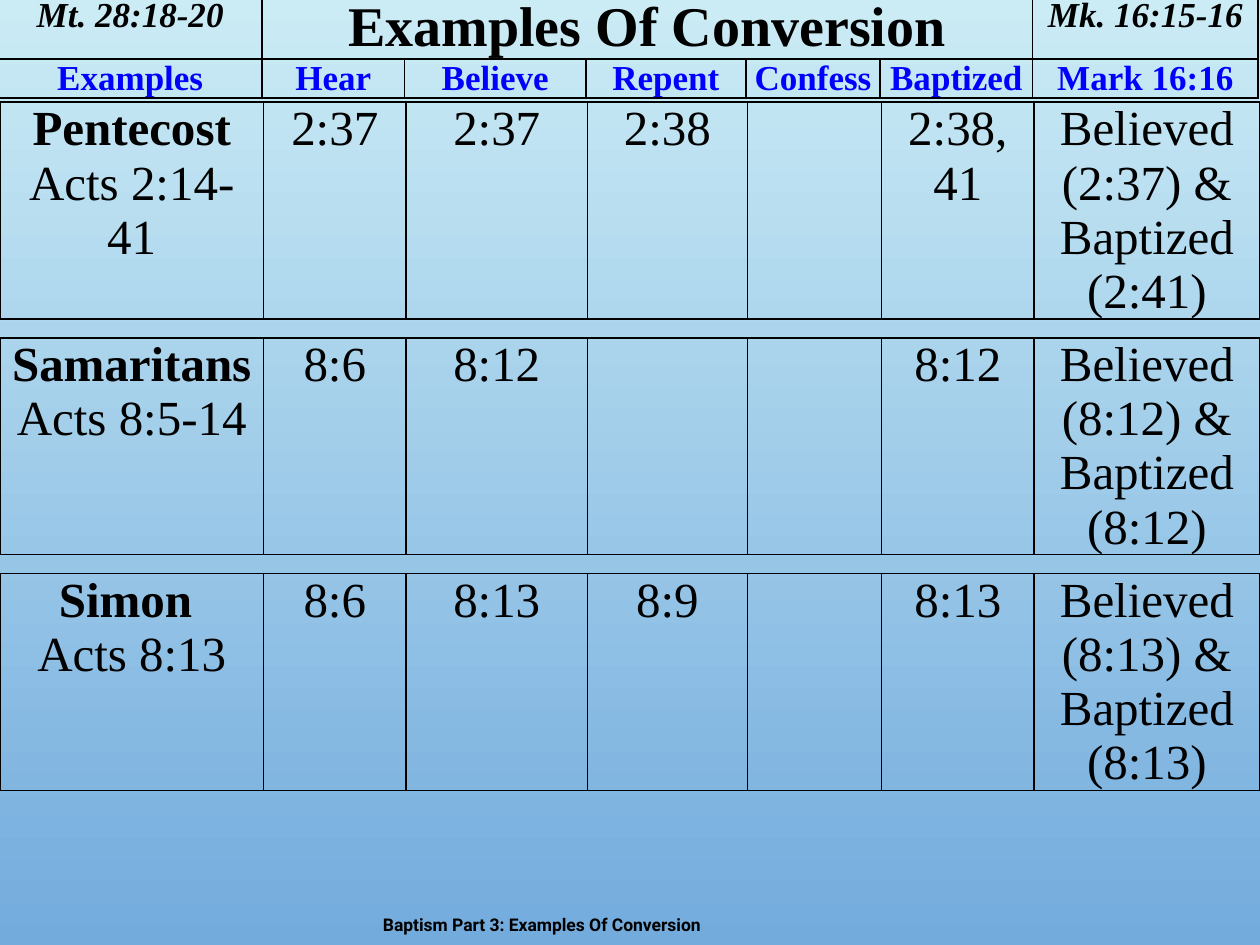
from dataclasses import dataclass

from lxml import etree
from pptx import Presentation
from pptx.dml.color import RGBColor
from pptx.enum import text
from pptx.oxml import ns
from pptx.util import Cm, Pt

COLORS = {"sky": "CBECF5", "deep": "73ABDD", "ink": "000000", "heading": "0000FF"}
SERIF, SANS = "Times New Roman", "Roboto"
COLUMNS = (5.31, 2.88, 3.65, 3.23, 2.7, 3.08, 4.54)
HEADINGS = ("Examples", "Hear", "Believe", "Repent", "Confess", "Baptized", "Mark 16:16")
FIRST_TOP, STEP, EXAMPLE_HEIGHT = 2.06, 4.75, 4.37


@dataclass
class Style:
    size: float
    color: str = "ink"
    bold: bool = False
    italic: bool = False
    font: str = SERIF


@dataclass
class Example:
    name: str
    passage: str
    verses: tuple[str, ...]
    summary: str


REFERENCE = Style(20, bold=True, italic=True)
TITLE = Style(32, bold=True)
HEADING = Style(20, "heading", bold=True)
NAME = Style(28, bold=True)
BODY = Style(28)
FOOTER = Style(10, bold=True, font=SANS)

EXAMPLES = (
    Example("Pentecost", "Acts 2:14-41", ("2:37", "2:37", "2:38", "", "2:38, 41"),
            "Believed (2:37) & Baptized (2:41)"),
    Example("Samaritans", "Acts 8:5-14", ("8:6", "8:12", "", "", "8:12"),
            "Believed (8:12) & Baptized (8:12)"),
    Example("Simon ", "Acts 8:13", ("8:6", "8:13", "8:9", "", "8:13"),
            "Believed (8:13) & Baptized (8:13)"),
)


def format_runs(p, style: Style) -> None:
    for r in p.runs:
        font = r.font
        font.name, font.size = style.font, Pt(style.size)
        font.bold, font.italic = style.bold, style.italic
        font.color.rgb = RGBColor.from_string(COLORS[style.color])


def add_borders(cell) -> None:
    tc_pr = cell._tc.get_or_add_tcPr()
    for side in ("lnL", "lnR", "lnT", "lnB"):
        line = etree.SubElement(tc_pr, ns.qn(f"a:{side}"), w=str(Pt(1)))
        fill = etree.SubElement(line, ns.qn("a:solidFill"))
        etree.SubElement(fill, ns.qn("a:srgbClr"), val=COLORS["ink"])


def add_grid(slide, left: float, top: float, heights: tuple[float, ...]):
    """Add an unfilled, bordered table with the shared column widths."""
    table = slide.shapes.add_table(
        len(heights), len(COLUMNS), Cm(left), Cm(top),
        Cm(sum(COLUMNS)), Cm(sum(heights))).table
    table.first_row = table.horz_banding = False
    for column, width in zip(table.columns, COLUMNS):
        column.width = Cm(width)
    for row, height in zip(table.rows, heights):
        row.height = Cm(height)
    for cell in table.iter_cells():
        add_borders(cell)
        cell.fill.background()
        cell.margin_left = cell.margin_right = Cm(0.13)
        cell.margin_top = cell.margin_bottom = 0
    return table


def fill_cell(cell, content: str, *styles: Style) -> None:
    """Write one centred paragraph per line, each with its own style."""
    if not content:
        return
    cell.text_frame.text = content
    for p, style in zip(cell.text_frame.paragraphs, styles):
        p.alignment = text.PP_ALIGN.CENTER
        format_runs(p, style)


def add_header(slide) -> None:
    table = add_grid(slide, -0.03, -0.08, (1.27, 0.79))
    table.cell(0, 1).merge(table.cell(0, 5))
    fill_cell(table.cell(0, 0), "Mt. 28:18-20", REFERENCE)
    fill_cell(table.cell(0, 1), "Examples Of Conversion", TITLE)
    fill_cell(table.cell(0, 6), "Mk. 16:15-16", REFERENCE)
    for i, heading in enumerate(HEADINGS):
        fill_cell(table.cell(1, i), heading, HEADING)


def add_example(slide, example: Example, top: float) -> None:
    table = add_grid(slide, 0, top, (EXAMPLE_HEIGHT,))
    fill_cell(table.cell(0, 0), f"{example.name}\n{example.passage}", NAME, BODY)
    for i, verse in enumerate(example.verses, start=1):
        fill_cell(table.cell(0, i), verse, BODY)
    summary = table.cell(0, 6)
    summary.margin_left = summary.margin_right = Cm(0.18)
    fill_cell(summary, example.summary, BODY)


def add_footer(slide) -> None:
    tf = slide.shapes.add_textbox(Cm(7.47), Cm(18.21), Cm(10.36), Cm(0.84)).text_frame
    tf.word_wrap = True
    tf.vertical_anchor = text.MSO_ANCHOR.MIDDLE
    tf.text = "Baptism Part 3: Examples Of Conversion"
    format_runs(tf.paragraphs[0], FOOTER)


def set_background(slide) -> None:
    fill = slide.background.fill
    fill.gradient()
    fill.gradient_angle = 270
    for stop, name in zip(fill.gradient_stops, ("sky", "deep")):
        stop.color.rgb = RGBColor.from_string(COLORS[name])


def main() -> None:
    prs = Presentation()
    prs.slide_width, prs.slide_height = Cm(25.4), Cm(19.05)
    slide = prs.slides.add_slide(prs.slide_layouts[6])
    set_background(slide)
    add_header(slide)
    for i, example in enumerate(EXAMPLES):
        add_example(slide, example, FIRST_TOP + i * STEP)
    add_footer(slide)
    prs.save("out.pptx")


if __name__ == "__main__":
    main()
